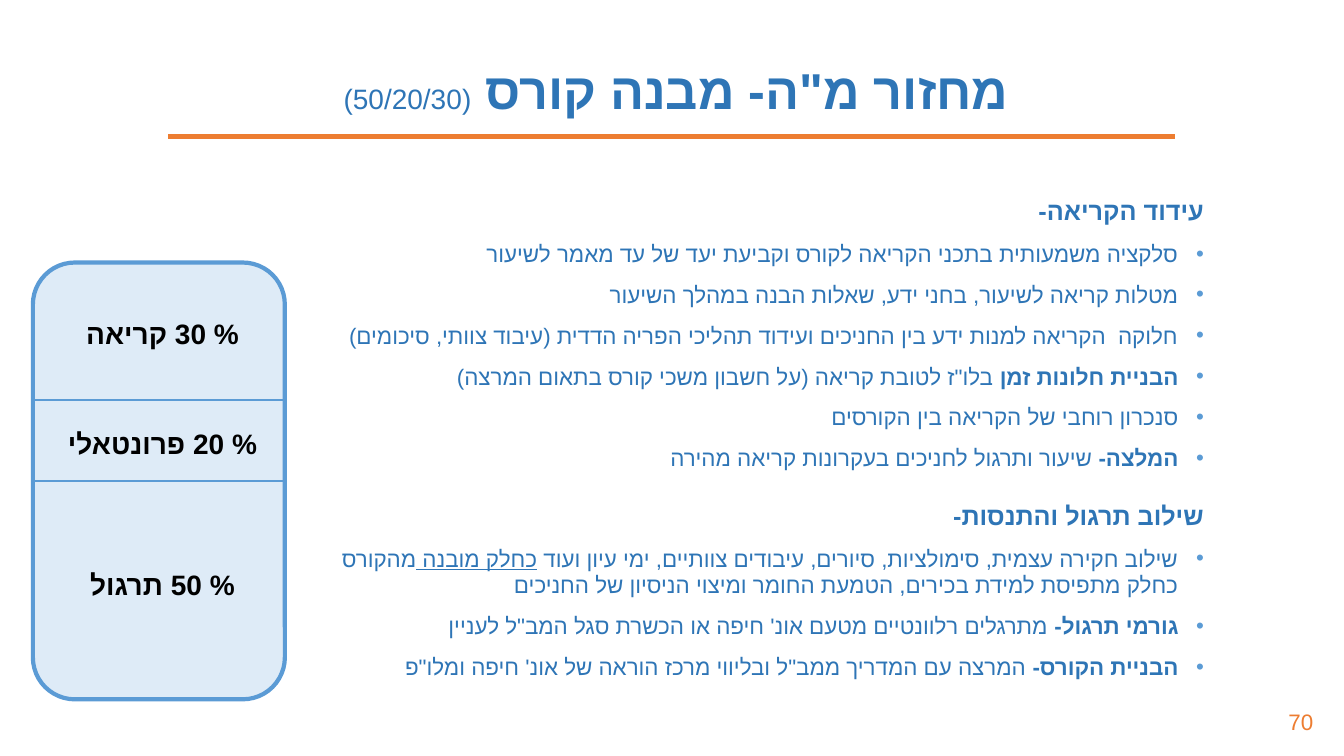
from lxml.etree import SubElement
from pptx import Presentation
from pptx.dml.color import RGBColor
from pptx.enum.shapes import MSO_CONNECTOR, MSO_SHAPE
from pptx.enum.text import MSO_ANCHOR, PP_ALIGN
from pptx.oxml.ns import qn
from pptx.util import Pt

COLORS = {"blue": "2E75B6", "outline": "5B9BD5", "panel": "DEEBF7",
          "orange": "ED7D31", "black": "000000"}
FONT, HEBREW_FONT = "Roboto", "Arial"

# Each paragraph is a list of (text, format values) runs
BOLD, PLAIN = {"bold": True}, {}
SECTIONS = [
    ("עידוד הקריאה-", [
        [("סלקציה משמעותית בתכני הקריאה לקורס וקביעת יעד של עד מאמר לשיעור", PLAIN)],
        [("מטלות קריאה לשיעור, בחני ידע, שאלות הבנה במהלך השיעור ", PLAIN)],
        [("חלוקה  הקריאה למנות ידע בין החניכים ועידוד תהליכי הפריה הדדית "
          "(עיבוד צוותי, סיכומים)", PLAIN)],
        [("הבניית חלונות זמן ", BOLD),
         ("בלו\"ז לטובת קריאה (על חשבון משכי קורס בתאום המרצה)", PLAIN)],
        [("סנכרון רוחבי של הקריאה בין הקורסים ", PLAIN)],
        [("המלצה- ", BOLD), ("שיעור ותרגול לחניכים בעקרונות קריאה מהירה", PLAIN)],
    ]),
    ("שילוב תרגול והתנסות-", [
        [("שילוב חקירה עצמית, סימולציות, סיורים, עיבודים צוותיים, ימי עיון ועוד ", PLAIN),
         ("כחלק מובנה ", {"underline": True}),
         ("מהקורס כחלק מתפיסת למידת בכירים, הטמעת החומר ומיצוי הניסיון של החניכים", PLAIN)],
        [("גורמי תרגול- ", BOLD),
         ("מתרגלים רלוונטיים מטעם אונ' חיפה או הכשרת סגל המב\"ל לעניין", PLAIN)],
        [("הבניית הקורס- ", BOLD),
         ("המרצה עם המדריך ממב\"ל ובליווי מרכז הוראה של אונ' חיפה ומלו\"פ", PLAIN)],
    ]),
]

# Label and its distance below the top of the panel
SHARES = [("% 30 קריאה ", 35), ("% 20 פרונטאלי ", 113.5), ("% 50 תרגול ", 214.5)]


def rgb(color):
    return RGBColor.from_string(COLORS[color])


def set_values(target, values):
    for name, value in values.items():
        setattr(target, name, value)


def add_text_frame(slide, box, **values):
    frame = slide.shapes.add_textbox(*map(Pt, box)).text_frame
    set_values(frame, {"word_wrap": True, **values})
    return frame


def write_paragraph(paragraph, runs, color, **values):
    """Fill a right-to-left paragraph with (text, format values) runs."""
    set_values(paragraph, values)
    paragraph._p.get_or_add_pPr().set("rtl", "1")
    for text, font_values in runs:
        run = paragraph.add_run()
        run.text = text
        set_values(run.font, {"name": FONT, "bold": False, **font_values})
        run.font.color.rgb = rgb(color)
        SubElement(run._r.get_or_add_rPr(), qn("a:cs"), typeface=HEBREW_FONT)


def add_bullet(paragraph):
    properties = paragraph._p.get_or_add_pPr()
    for name, value in {"marL": Pt(18), "indent": Pt(-18)}.items():
        properties.set(name, str(value))
    bullet_color = SubElement(properties, qn("a:buClr"))
    SubElement(bullet_color, qn("a:srgbClr"), val=COLORS["outline"])
    SubElement(properties, qn("a:buFont"), typeface="Arial")
    SubElement(properties, qn("a:buChar"), char="•")


def add_title(slide, box):
    frame = add_text_frame(slide, box, vertical_anchor=MSO_ANCHOR.MIDDLE)
    runs = [("מחזור מ\"ה- מבנה קורס ", {"size": Pt(36), "bold": True}),
            ("(50/20/30)", {"size": Pt(20)})]
    write_paragraph(frame.paragraphs[0], runs, "blue",
                    alignment=PP_ALIGN.CENTER, line_spacing=0.9)


def add_title_rule(slide, box):
    rule = slide.shapes.add_shape(MSO_SHAPE.MATH_MINUS, *map(Pt, box))
    rule.shadow.inherit = False
    rule.fill.solid()
    rule.fill.fore_color.rgb = rgb("orange")
    rule.line.fill.background()


def add_page_number(slide, box):
    frame = add_text_frame(slide, box)
    runs = [(" ", {"size": Pt(16), "name": "Calibri"}), ("70", {"size": Pt(16)})]
    write_paragraph(frame.paragraphs[0], runs, "orange", alignment=PP_ALIGN.RIGHT)


def add_divider(slide, left, right, y):
    divider = slide.shapes.add_connector(MSO_CONNECTOR.STRAIGHT,
                                         Pt(left), Pt(y), Pt(right), Pt(y))
    divider.line.color.rgb = rgb("outline")
    divider.line.width = Pt(1.5)
    SubElement(divider._element.spPr, qn("a:effectLst"))
    return divider


def add_share_panel(slide, box):
    left, top, width, height = box
    panel = slide.shapes.add_shape(MSO_SHAPE.ROUNDED_RECTANGLE, *map(Pt, box))
    panel.shadow.inherit = False
    panel.fill.solid()
    panel.fill.fore_color.rgb = rgb("panel")
    panel.line.color.rgb = rgb("outline")
    panel.line.width = Pt(3)

    # Dividers: the lower one halves the panel
    add_divider(slide, left, left + width, top + 98)
    halfway = add_divider(slide, left, left + width, top + height / 2)
    halfway.begin_connect(panel, 1)
    halfway.end_connect(panel, 3)

    # Share labels
    for label, offset in SHARES:
        frame = add_text_frame(slide, (left + 9, top + offset, width - 18.5, 31.5))
        write_paragraph(frame.paragraphs[0], [(label, {"size": Pt(20), "bold": True})],
                        "black", alignment=PP_ALIGN.CENTER)


def add_sections(slide, box):
    frame = add_text_frame(slide, box)
    layout = {"alignment": PP_ALIGN.RIGHT, "space_before": Pt(10)}
    paragraph = frame.paragraphs[0]
    for number, (heading, points) in enumerate(SECTIONS):
        if number:
            paragraph = frame.add_paragraph()
        write_paragraph(paragraph, [(heading, {"size": Pt(18), "bold": True})],
                        "blue", line_spacing=1.5, **layout)
        for point in points:
            paragraph = frame.add_paragraph()
            runs = [(text, {"size": Pt(16), **values}) for text, values in point]
            write_paragraph(paragraph, runs, "blue", **layout)
            add_bullet(paragraph)


def main():
    presentation = Presentation()
    set_values(presentation, {"slide_width": Pt(960), "slide_height": Pt(540)})
    slide = presentation.slides.add_slide(presentation.slide_layouts[6])
    add_title_rule(slide, (-9.5, 90.5, 978.5, 14.5))
    add_page_number(slide, (907, 502.5, 42.5, 26.5))
    add_title(slide, (69, 14.5, 828, 104.5))
    add_share_panel(slide, (23.5, 187.5, 180, 312))
    add_sections(slide, (219.5, 125.5, 647.5, 406))
    presentation.save("out.pptx")


if __name__ == "__main__":
    main()
